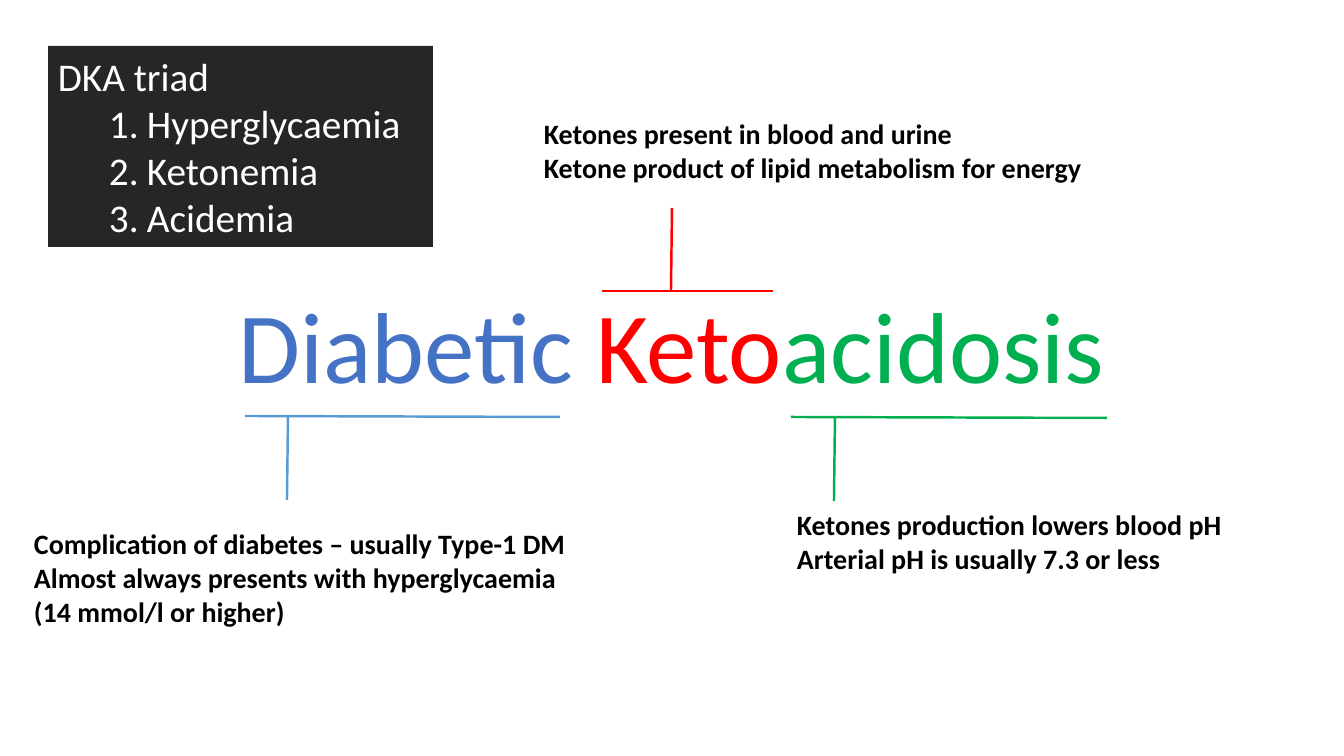
from copy import deepcopy

from lxml import etree
from pptx import Presentation
from pptx.dml.color import RGBColor
from pptx.enum.shapes import MSO_CONNECTOR, MSO_SHAPE
from pptx.enum.text import MSO_ANCHOR, MSO_AUTO_SIZE, PP_ALIGN
from pptx.oxml.ns import qn
from pptx.util import Pt

STRAIGHT = MSO_CONNECTOR.STRAIGHT
RECTANGLE = MSO_SHAPE.RECTANGLE
TOP, MIDDLE = MSO_ANCHOR.TOP, MSO_ANCHOR.MIDDLE
NO_AUTOFIT = MSO_AUTO_SIZE.NONE
LEFT, CENTER = PP_ALIGN.LEFT, PP_ALIGN.CENTER

BLACK = RGBColor(0x00, 0x00, 0x00)
WHITE = RGBColor(0xFF, 0xFF, 0xFF)
CHARCOAL = RGBColor(0x26, 0x26, 0x26)
SKY = RGBColor(0x5B, 0x9B, 0xD5)
RED = RGBColor(0xFF, 0x00, 0x00)
GREEN = RGBColor(0x00, 0xB0, 0x50)
BLUES = [RGBColor(0x20, 0x38, 0x64), RGBColor(0x44, 0x72, 0xC4),
         RGBColor(0x8F, 0xAA, 0xDC)]


class SlideBuilder:
    FONT = "Calibri"
    EMU_PER_PX = 914400 / 100.8

    def __init__(self, prs):
        prs.slide_width, prs.slide_height = self.emu(1344, 756)
        self.s = prs.slides.add_slide(prs.slide_layouts[5])

    def emu(self, *lengths):
        return [round(n * self.EMU_PER_PX) for n in lengths]

    def style(self, p, size, color=None, bold=False):
        p.font.name, p.font.size, p.font.bold = self.FONT, Pt(size), bold
        if color is not None:
            p.font.color.rgb = color

    def gradient(self, r, colors):
        fill = r.font.fill
        fill.gradient()
        fill.gradient_angle = 270
        stops = r.font._element.find(".//" + qn("a:gsLst"))
        while len(stops) < len(colors):
            stops.insert(1, deepcopy(stops[0]))
        for i, (stop, color) in enumerate(zip(fill.gradient_stops, colors)):
            stop.position = i / (len(colors) - 1)
            stop.color.rgb = color

    def title(self, box, parts, size):
        sp = self.s.shapes.title
        sp.left, sp.top, sp.width, sp.height = self.emu(*box)
        tf = sp.text_frame
        tf.word_wrap, tf.auto_size = False, NO_AUTOFIT
        tf.vertical_anchor = TOP
        p = tf.paragraphs[0]
        p.alignment = CENTER
        self.style(p, size)
        for text, color in parts:
            r = p.add_run()
            r.text = text
            if isinstance(color, list):
                self.gradient(r, color)
            else:
                r.font.color.rgb = color

    def line(self, ends, color):
        cxn = self.s.shapes.add_connector(STRAIGHT, *self.emu(*ends))
        cxn.line.color.rgb, cxn.line.width = color, Pt(1.75)
        etree.SubElement(cxn._element.spPr, qn("a:effectLst"))

    def note(self, box, lines):
        tf = self.s.shapes.add_textbox(*self.emu(*box)).text_frame
        tf.word_wrap = True
        tf.text = "\n".join(lines)
        for p in tf.paragraphs:
            self.style(p, 20, BLACK, bold=True)

    def numbered_panel(self, box, heading, items):
        sp = self.s.shapes.add_shape(RECTANGLE, *self.emu(*box))
        sp.shadow.inherit = False
        sp.fill.solid()
        sp.fill.fore_color.rgb = CHARCOAL
        sp.line.fill.background()
        tf = sp.text_frame
        tf.word_wrap, tf.vertical_anchor = True, MIDDLE
        tf.text = "\n".join([heading, *items])
        for p in tf.paragraphs:
            p.alignment = LEFT
            self.style(p, 28, WHITE)
        margin, hang = self.emu(89, 38)
        for p in tf.paragraphs[1:]:
            p.level = 1
            pPr = p._p.get_or_add_pPr()
            pPr.set("marL", str(margin))
            pPr.set("indent", str(-hang))
            number = etree.Element(qn("a:buAutoNum"), type="arabicPeriod")
            pPr.insert(0, number)


def main():
    prs = Presentation()
    slide = SlideBuilder(prs)

    # Title, one colour per word part
    slide.title((224, 278, 895, 132), [
        ("Diabetic ", BLUES), ("Keto", RED), ("acidosis", GREEN)], 72)

    # Callouts: rule along the word, stem, explanation
    callouts = [
        (SKY, (245, 416, 560, 417), (288, 416, 287, 500), (24, 522, 558, 142),
         ["Complication of diabetes – usually Type-1 DM",
          "Almost always presents with hyperglycaemia",
          "(14 mmol/l or higher)"]),
        (GREEN, (791, 417, 1107, 418), (835, 417, 834, 501), (787, 503, 465, 109),
         ["Ketones production lowers blood pH",
          "Arterial pH is usually 7.3 or less"]),
        (RED, (602, 291, 773, 291), (672, 208, 671, 291), (534, 112, 572, 109),
         ["Ketones present in blood and urine",
          "Ketone product of lipid metabolism for energy"]),
    ]
    for color, rule, stem, box, lines in callouts:
        slide.line(rule, color)
        slide.line(stem, color)
        slide.note(box, lines)

    # Triad panel
    slide.numbered_panel((48, 46, 385, 201), "DKA triad",
                         ["Hyperglycaemia", "Ketonemia", "Acidemia"])

    prs.save("out.pptx")


if __name__ == "__main__":
    main()
